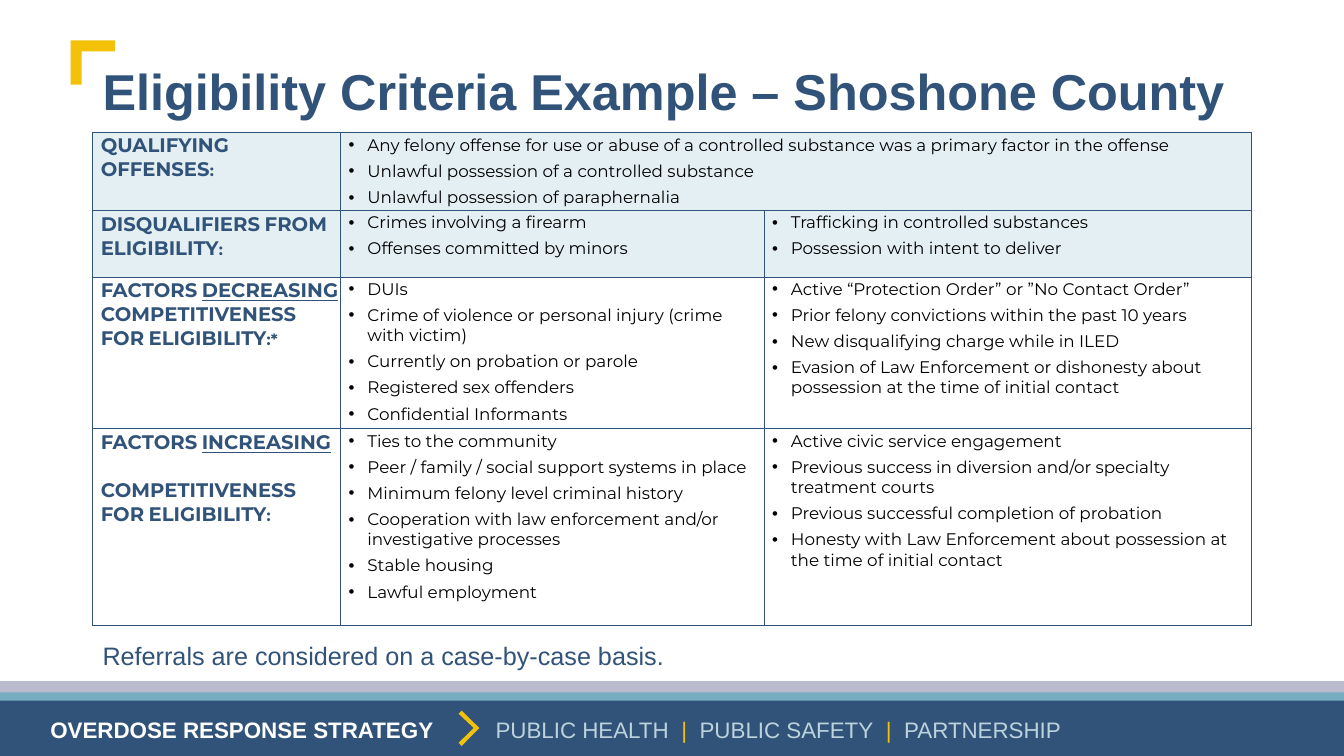
from pptx import Presentation, util as u
from pptx.dml.color import RGBColor
from pptx.enum import shapes, text
from pptx.oxml.ns import qn
from lxml import etree

Pt = u.Pt
NAVY = RGBColor(0x32, 0x53, 0x79)
TEAL = RGBColor(0x76, 0xAD, 0xC1)
LILAC = RGBColor(0xBB, 0xBB, 0xCE)
SKY = RGBColor(0xBC, 0xD3, 0xDE)
PALE = RGBColor(0xE4, 0xEF, 0xF3)
GOLD = RGBColor(0xF3, 0xC1, 0x08)
WHITE = RGBColor(0xFF, 0xFF, 0xFF)
BLACK = RGBColor(0, 0, 0)

prs = Presentation()
prs.slide_width, prs.slide_height = Pt(960), Pt(540)
s = prs.slides.add_slide(prs.slide_layouts[6])


def add_run(p, words, size, color, bold=False, font="Arial"):
    r = p.add_run()
    r.text = words
    r.font.name = font
    r.font.size = Pt(size)
    r.font.bold = bold
    r.font.color.rgb = color
    return r


def add_box(x, y, w, h, inset=(7.2, 3.6)):
    tf = s.shapes.add_textbox(Pt(x), Pt(y), Pt(w), Pt(h)).text_frame
    tf.word_wrap = True
    tf.margin_left = tf.margin_right = Pt(inset[0])
    tf.margin_top = tf.margin_bottom = Pt(inset[1])
    return tf


for top, color in [(486.5, LILAC), (494.5, TEAL), (500.5, NAVY)]:
    sp = s.shapes.add_shape(shapes.MSO_SHAPE.RECTANGLE, 0, Pt(top), Pt(960), Pt(540 - top))
    sp.shadow.inherit = False
    sp.fill.solid()
    sp.fill.fore_color.rgb = color
    sp.line.fill.background()

chevron = [(329.8, 532.8), (327.6, 530.6), (338.4, 520), (327.6, 509.8), (329.8, 507.6), (342.4, 520)]
corner = [(50.4, 28.8), (82, 28.8), (82, 36.7), (58.3, 36.7), (58.3, 60.5), (50.4, 60.5)]
for outline in (chevron, corner):
    points = [(Pt(x), Pt(y)) for x, y in outline]
    fb = s.shapes.build_freeform(*points[0])
    fb.add_line_segments(points[1:], close=True)
    sp = fb.convert_to_shape()
    sp.shadow.inherit = False
    sp.fill.solid()
    sp.fill.fore_color.rgb = GOLD
    sp.line.fill.background()

p = add_box(36, 513.4, 280, 14.4, (0, 1.4)).paragraphs[0]
p.line_spacing = 0.84
add_run(p, "OVERDOSE RESPONSE STRATEGY", 16, WHITE, True)

p = add_box(354, 513.4, 570, 14.4, (0, 1.4)).paragraphs[0]
p.line_spacing = 0.84
for words, color in [("PUBLIC HEALTH", SKY), (" |", GOLD), (" PUBLIC SAFETY", SKY),
                     (" |", GOLD), (" PARTNERSHIP", SKY)]:
    r = add_run(p, words, 16, color)
    if color == GOLD:
        r.font._element.set("spc", "445")

tf = add_box(66.2, 22.3, 828, 89.3)
tf.vertical_anchor = text.MSO_ANCHOR.MIDDLE
p = tf.paragraphs[0]
p.line_spacing = 0.9
add_run(p, "Eligibility Criteria Example – Shoshone County", 36, NAVY, True)

labels = [
    [["QUALIFYING OFFENSES:"]],
    [["DISQUALIFIERS FROM ELIGIBILITY:"]],
    [["FACTORS ", "DECREASING", " COMPETITIVENESS FOR ELIGIBILITY:*"]],
    [["FACTORS ", "INCREASING"], ["COMPETITIVENESS FOR ELIGIBILITY:"]],
]
criteria = [
    [["Any felony offense for use or abuse of a controlled substance was a primary factor in the offense",
      "Unlawful possession of a controlled substance",
      "Unlawful possession of paraphernalia"]],
    [["Crimes involving a firearm",
      "Offenses committed by minors"],
     ["Trafficking in controlled substances",
      "Possession with intent to deliver"]],
    [["DUIs",
      "Crime of violence or personal injury (crime with victim)",
      "Currently on probation or parole",
      "Registered sex offenders",
      "Confidential Informants"],
     ["Active “Protection Order” or ”No Contact Order”",
      "Prior felony convictions within the past 10 years",
      "New disqualifying charge while in ILED",
      "Evasion of Law Enforcement or dishonesty about possession at the time of initial contact"]],
    [["Ties to the community",
      "Peer / family / social support systems in place",
      "Minimum felony level criminal history",
      "Cooperation with law enforcement and/or investigative processes",
      "Stable housing",
      "Lawful employment"],
     ["Active civic service engagement",
      "Previous success in diversion and/or specialty treatment courts",
      "Previous successful completion of probation",
      "Honesty with Law Enforcement about possession at the time of initial contact"]],
]

tbl = s.shapes.add_table(4, 3, Pt(66.2), Pt(94.3), Pt(828), Pt(352.5)).table
tbl.first_row = tbl.horz_banding = False
for col, width in zip(tbl.columns, [177, 302.5, 348.5]):
    col.width = Pt(width)
for row, height in zip(tbl.rows, [56, 47.5, 108.5, 140.5]):
    row.height = Pt(height)

for i, row in enumerate(tbl.rows):
    for cell in row.cells:
        cell.margin_left, cell.margin_right = Pt(5.8), Pt(4.3)
        cell.margin_top = cell.margin_bottom = Pt(1.4)
        tcPr = cell._tc.get_or_add_tcPr()
        for side in ("a:lnL", "a:lnR", "a:lnT", "a:lnB"):
            ln = etree.SubElement(tcPr, qn(side), w=str(Pt(0.5)))
            fill = etree.SubElement(ln, qn("a:solidFill"))
            etree.SubElement(fill, qn("a:srgbClr"), val=str(NAVY))
        if i < 2:
            cell.fill.solid()
            cell.fill.fore_color.rgb = PALE
        else:
            cell.fill.background()

    tf = tbl.cell(i, 0).text_frame
    for n, parts in enumerate(labels[i]):
        p = tf.add_paragraph() if n else tf.paragraphs[0]
        p.space_before = Pt(17 * n)
        for k, words in enumerate(parts):
            r = add_run(p, words, 14, NAVY, True, "Montserrat")
            r.font.underline = k == 1
            r.font._element.set("cap", "small")

    for j, items in enumerate(criteria[i], 1):
        tf = tbl.cell(i, j).text_frame
        for n, words in enumerate(items):
            p = tf.add_paragraph() if n else tf.paragraphs[0]
            p.space_after = Pt(4)
            pPr = p._p.get_or_add_pPr()
            pPr.set("marL", str(Pt(13.5)))
            pPr.set("indent", str(Pt(-13.5)))
            bullet = etree.SubElement(pPr, qn("a:buClr"))
            etree.SubElement(bullet, qn("a:srgbClr"), val=str(BLACK))
            etree.SubElement(pPr, qn("a:buFont"), typeface="Arial")
            etree.SubElement(pPr, qn("a:buChar"), char="•")
            add_run(p, words, 12, BLACK, font="Montserrat")

tbl.cell(0, 1).merge(tbl.cell(0, 2))
tbl.cell(0, 1).vertical_anchor = text.MSO_ANCHOR.MIDDLE

p = add_box(66.2, 453.6, 828, 29).paragraphs[0]
add_run(p, "Referrals are considered on a case-by-case basis.", 18, NAVY)

prs.save("out.pptx")
